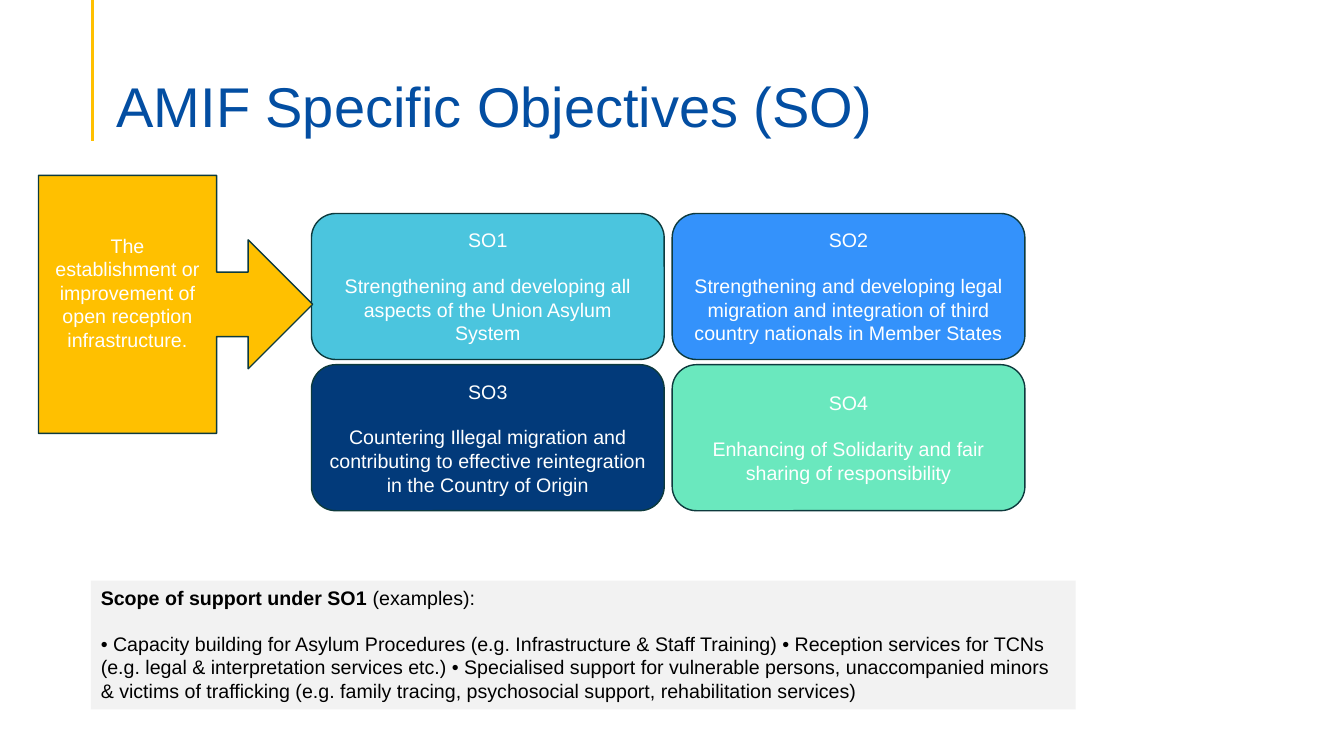
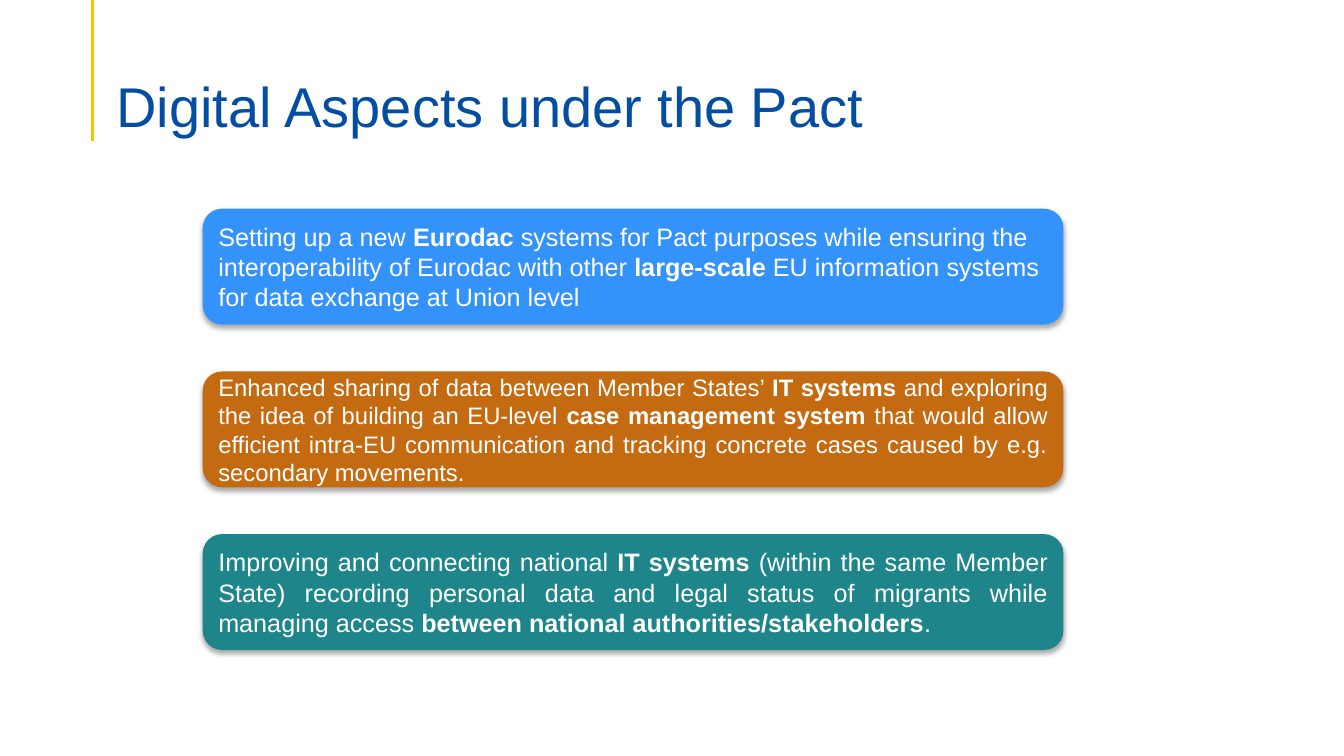
from pptx import Presentation
from pptx.dml.color import RGBColor
from pptx.enum.shapes import MSO_CONNECTOR, MSO_SHAPE
from pptx.enum.text import MSO_ANCHOR, PP_ALIGN
from pptx.oxml import parse_xml
from pptx.oxml.ns import nsdecls
from pptx.util import Cm, Pt

COLORS = {
    "title": "034EA2", "gold": "FFC000", "outline": "0D3A3D",
    "white": "FFFFFF", "black": "000000", "grey": "F2F2F2",
    "cyan": "4BC5DE", "blue": "3492FB", "navy": "023A7A",
    "mint": "6AE8BE", "orange": "C46A11", "teal": "1E858B",
}
FONT = "Arial"


def color(name):
    return RGBColor.from_string(COLORS[name])


class Deck:
    def __init__(self):
        self.prs = Presentation()
        self.prs.slide_width, self.prs.slide_height = Cm(33.87), Cm(19.05)
        self.s = None

    def slide(self, title):
        """Start a slide with the gold rule and the title."""
        self.s = self.prs.slides.add_slide(self.prs.slide_layouts[6])
        rule = self.s.shapes.add_connector(
            MSO_CONNECTOR.STRAIGHT, Cm(2.34), 0, Cm(2.34), Cm(3.56))
        rule.line.color.rgb = color("gold")
        rule.line.width = Pt(2.25)
        rule._element.spPr.append(parse_xml(f"<a:effectLst {nsdecls('a')}/>"))
        sp = self.s.shapes.add_textbox(Cm(2.69), Cm(1.35), Cm(29.21), Cm(2.18))
        sp.text_frame.margin_bottom = 0
        self.text(sp, [title], 40, "title", anchor=MSO_ANCHOR.BOTTOM)
        sp.text_frame.paragraphs[0].line_spacing = 0.9

    def shape(self, kind, box, fill, outline=None):
        sp = self.s.shapes.add_shape(kind, *(Cm(v) for v in box))
        sp.shadow.inherit = False
        sp.fill.solid()
        sp.fill.fore_color.rgb = color(fill)
        if outline:
            sp.line.color.rgb = color(outline)
            sp.line.width = Pt(1)
        else:
            sp.line.fill.background()
        return sp

    def text(self, sp, texts, size, ink="white", align=PP_ALIGN.LEFT,
             anchor=MSO_ANCHOR.MIDDLE, gap=0):
        """Fill in one paragraph per text; parts between ** are bold."""
        tf = sp.text_frame
        tf.word_wrap = True
        tf.vertical_anchor = anchor
        for i, text in enumerate(texts):
            p = tf.add_paragraph() if i else tf.paragraphs[0]
            p.alignment = align
            if i:
                p.space_before = Pt(gap)
            p.font.name, p.font.size = FONT, Pt(size)
            p.font.color.rgb = color(ink)
            for j, part in enumerate(text.split("**")):
                if part:
                    r = p.add_run()
                    r.text = part
                    if j % 2:
                        r.font.bold = True

    def objective(self, box, fill, name, text):
        sp = self.shape(MSO_SHAPE.ROUNDED_RECTANGLE, box, fill, "outline")
        self.text(sp, [name, text], 14, align=PP_ALIGN.CENTER, gap=16)

    def callout(self, box, text):
        sp = self.shape(MSO_SHAPE.RIGHT_ARROW_CALLOUT, box, "gold", "outline")
        sp.text_frame.margin_bottom = Cm(0.72)
        self.text(sp, [text], 14, align=PP_ALIGN.CENTER)

    def note(self, box, texts):
        sp = self.shape(MSO_SHAPE.RECTANGLE, box, "grey")
        self.text(sp, texts, 14, "black", anchor=MSO_ANCHOR.TOP, gap=16)

    def card(self, box, fill, text, size, align):
        """Add a rounded card with a soft shadow below it."""
        sp = self.shape(MSO_SHAPE.ROUNDED_RECTANGLE, box, fill)
        effects = sp._element.spPr[-1]
        effects.append(parse_xml(
            f'<a:outerShdw {nsdecls("a")} blurRad="{Pt(3.5)}" dist="{Pt(2.2)}" '
            f'dir="5400000" rotWithShape="0"><a:srgbClr val="{COLORS["black"]}">'
            '<a:alpha val="32000"/></a:srgbClr></a:outerShdw>'))
        self.text(sp, [text], size, align=align)


OBJECTIVES = [
    ("cyan", "Strengthening and developing all aspects of the Union Asylum System"),
    ("blue", "Strengthening and developing legal migration and integration of "
             "third country nationals in Member States"),
    ("navy", "Countering Illegal migration and contributing to effective "
             "reintegration in the Country of Origin"),
    ("mint", "Enhancing of Solidarity and fair sharing of responsibility"),
]
SCOPE = [
    "**Scope of support under SO1 **(examples):",
    "• Capacity building for Asylum Procedures (e.g. Infrastructure & Staff "
    "Training) • Reception services for TCNs (e.g. legal & interpretation "
    "services etc.) • Specialised support for vulnerable persons, unaccompanied "
    "minors & victims of trafficking (e.g. family tracing, psychosocial support, "
    "rehabilitation services)",
]
DIGITAL_ASPECTS = [
    ("blue", 18, PP_ALIGN.LEFT,
     "Setting up a new **Eurodac** systems for Pact purposes while ensuring the "
     "interoperability of Eurodac with other **large-scale **EU information "
     "systems for data exchange at Union level"),
    ("orange", 17, PP_ALIGN.JUSTIFY,
     "Enhanced sharing of data between Member States’ **IT systems **and "
     "exploring the idea of building an EU-level **case management system **that "
     "would allow efficient intra-EU communication and tracking concrete cases "
     "caused by e.g. secondary movements."),
    ("teal", 18, PP_ALIGN.JUSTIFY,
     "Improving and connecting national **IT systems **(within the same Member "
     "State) recording personal data and legal status of migrants while managing "
     "access **between national authorities/stakeholders**."),
]


def main():
    deck = Deck()

    deck.slide("AMIF Specific Objectives (SO)")
    for i, (fill, text) in enumerate(OBJECTIVES):
        row, col = divmod(i, 2)
        box = (7.85 + 9.09 * col, 5.38 + 3.81 * row, 8.89, 3.68)
        deck.objective(box, fill, f"SO{i + 1}", text)
    deck.callout((0.97, 4.42, 6.91, 6.5),
                 "The establishment or improvement of open reception infrastructure.")
    deck.note((2.29, 14.63, 24.82, 3.25), SCOPE)

    deck.slide("Digital Aspects under the Pact")
    for i, (fill, size, align, text) in enumerate(DIGITAL_ASPECTS):
        deck.card((5.11, 5.26 + 4.1 * i, 21.69, 2.92), fill, text, size, align)

    deck.prs.save("out.pptx")


if __name__ == "__main__":
    main()
